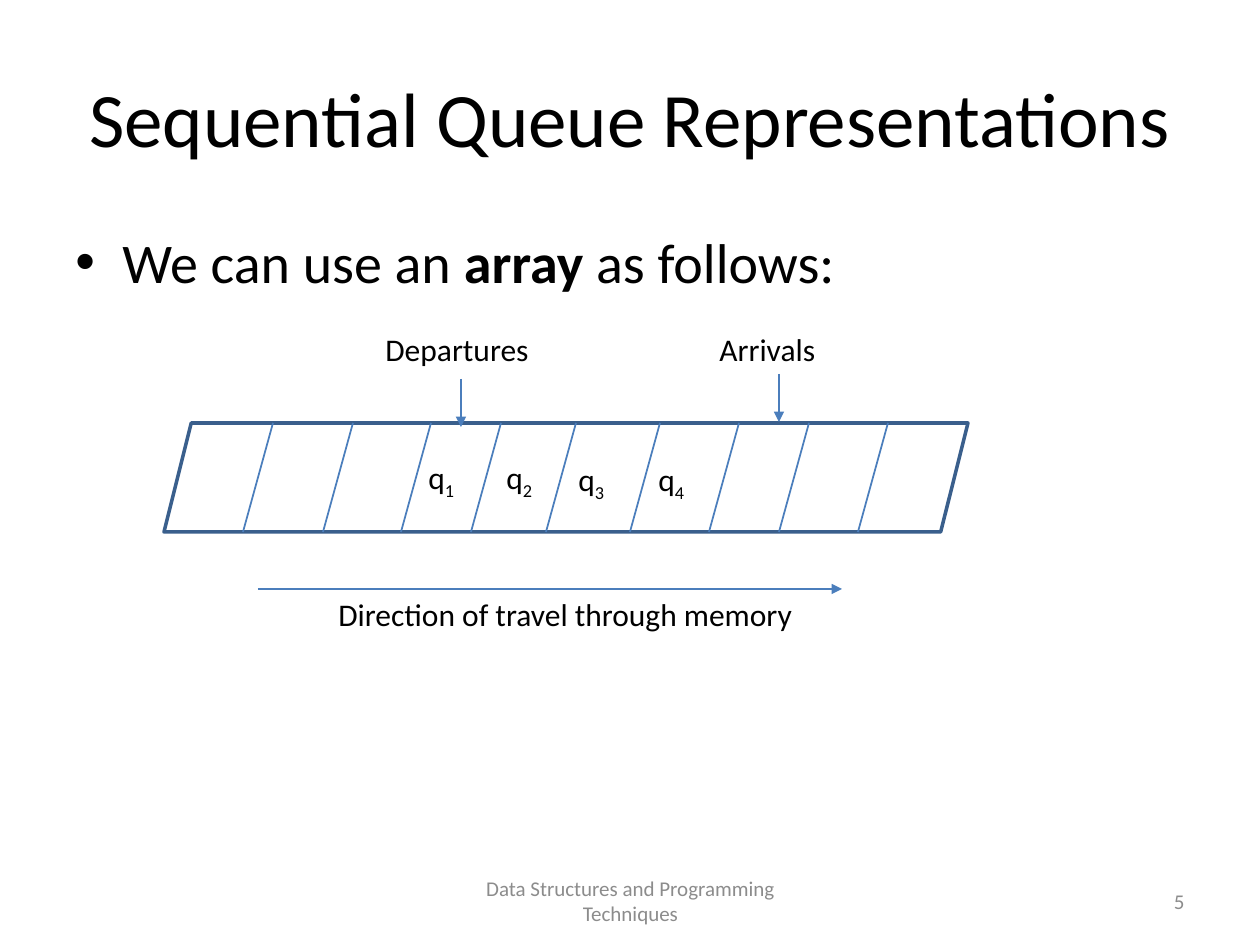
import pptx
import pptx.dml.color
import pptx.enum.shapes
import pptx.enum.text
import pptx.oxml.ns
import pptx.util
from lxml import etree

PX = 914400 // 126
FONT = "Calibri"
COLORS = {"text": "000000", "muted": "8C8C8C", "fill": "FFFFFF",
          "outline": "3A5F8C", "line": "4B7EBC"}
ALIGN = pptx.enum.text.PP_ALIGN
ANCHOR = pptx.enum.text.MSO_ANCHOR

# Runs are (text, style), style being "", "bold" or "sub"
TITLE = [("Sequential Queue Representations", "")]
BULLET = [("We can use an ", ""), ("array", "bold"), (" as follows:", "")]
FOOTER = [("Data Structures and Programming Techniques", "")]
PAGE = [("5", "")]
LABELS = [("Departures", (373, 324, 185, 51)),
          ("Arrivals", (707, 324, 185, 51)),
          ("Direction of travel through memory", (326, 589, 517, 51))]
ITEMS = [(416, 452), (494, 452), (566, 454), (646, 454)]  # left, top of q1..q4

ARRAY = (164, 423, 804, 109)
DIVIDERS = [273, 353, 431, 501, 576, 660, 739, 809, 888]  # x at the top edge
SLANT = 30
ARROWS = [(779, 374, 779, 422), (461, 379, 461, 427), (258, 589, 842, 589)]


def px(*values):
    return [v * PX for v in values]


def rgb(name):
    return pptx.dml.color.RGBColor.from_string(COLORS[name])


def add_text(s, box, runs, size=18, color="text", align=ALIGN.LEFT,
             anchor=ANCHOR.TOP):
    tf = s.shapes.add_textbox(*px(*box)).text_frame
    tf.word_wrap = True
    tf.vertical_anchor = anchor
    p = tf.paragraphs[0]
    p.alignment = align
    for text, style in runs:
        r = p.add_run()
        r.text = text
        r.font.name = FONT
        r.font.size = pptx.util.Pt(size)
        r.font.bold = style == "bold"
        r.font.color.rgb = rgb(color)
        if style == "sub":
            r.font._element.set("baseline", "-25000")
    return p


def add_bullet(p, indent):
    pPr = p._p.get_or_add_pPr()
    pPr.set("marL", str(indent * PX))
    pPr.set("indent", str(-indent * PX))
    p.space_before = pptx.util.Pt(6.4)
    for tag, key, value in (("a:buFont", "typeface", "Arial"),
                            ("a:buChar", "char", "•")):
        etree.SubElement(pPr, pptx.oxml.ns.qn(tag)).set(key, value)


def add_line(s, ends, arrow=False):
    sp = s.shapes.add_connector(pptx.enum.shapes.MSO_CONNECTOR.STRAIGHT,
                                *px(*ends))
    sp.line.color.rgb = rgb("line")
    sp.line.width = pptx.util.Pt(1)
    if arrow:
        ln = sp.line._get_or_add_ln()
        etree.SubElement(ln, pptx.oxml.ns.qn("a:tailEnd")).set("type", "triangle")
    etree.SubElement(sp._element.spPr, pptx.oxml.ns.qn("a:effectLst"))


def add_array(s):
    sp = s.shapes.add_shape(pptx.enum.shapes.MSO_SHAPE.PARALLELOGRAM, *px(*ARRAY))
    sp.shadow.inherit = False
    sp.fill.solid()
    sp.fill.fore_color.rgb = rgb("fill")
    sp.line.color.rgb = rgb("outline")
    sp.line.width = pptx.util.Pt(2)
    top, bottom = ARRAY[1], ARRAY[1] + ARRAY[3]
    for x in DIVIDERS:
        add_line(s, (x, top, x - SLANT, bottom))


def main():
    prs = pptx.Presentation()
    prs.slide_width, prs.slide_height = pptx.util.Inches(10), pptx.util.Inches(7.5)
    s = prs.slides.add_slide(prs.slide_layouts[6])

    add_text(s, (63, 38, 1134, 157), TITLE, 44, align=ALIGN.CENTER,
             anchor=ANCHOR.MIDDLE)
    add_bullet(add_text(s, (63, 221, 1134, 624), BULLET, 32), 47)

    add_array(s)
    for i, (x, y) in enumerate(ITEMS, 1):
        add_text(s, (x, y, 71, 51), [("q", ""), (str(i), "sub")])
    for text, box in LABELS:
        add_text(s, box, [(text, "")])
    for ends in ARROWS:
        add_line(s, ends, arrow=True)

    add_text(s, (431, 876, 399, 50), FOOTER, 12, "muted", ALIGN.CENTER,
             ANCHOR.MIDDLE)
    add_text(s, (903, 876, 294, 50), PAGE, 12, "muted", ALIGN.RIGHT,
             ANCHOR.MIDDLE)
    prs.save("out.pptx")


if __name__ == "__main__":
    main()
